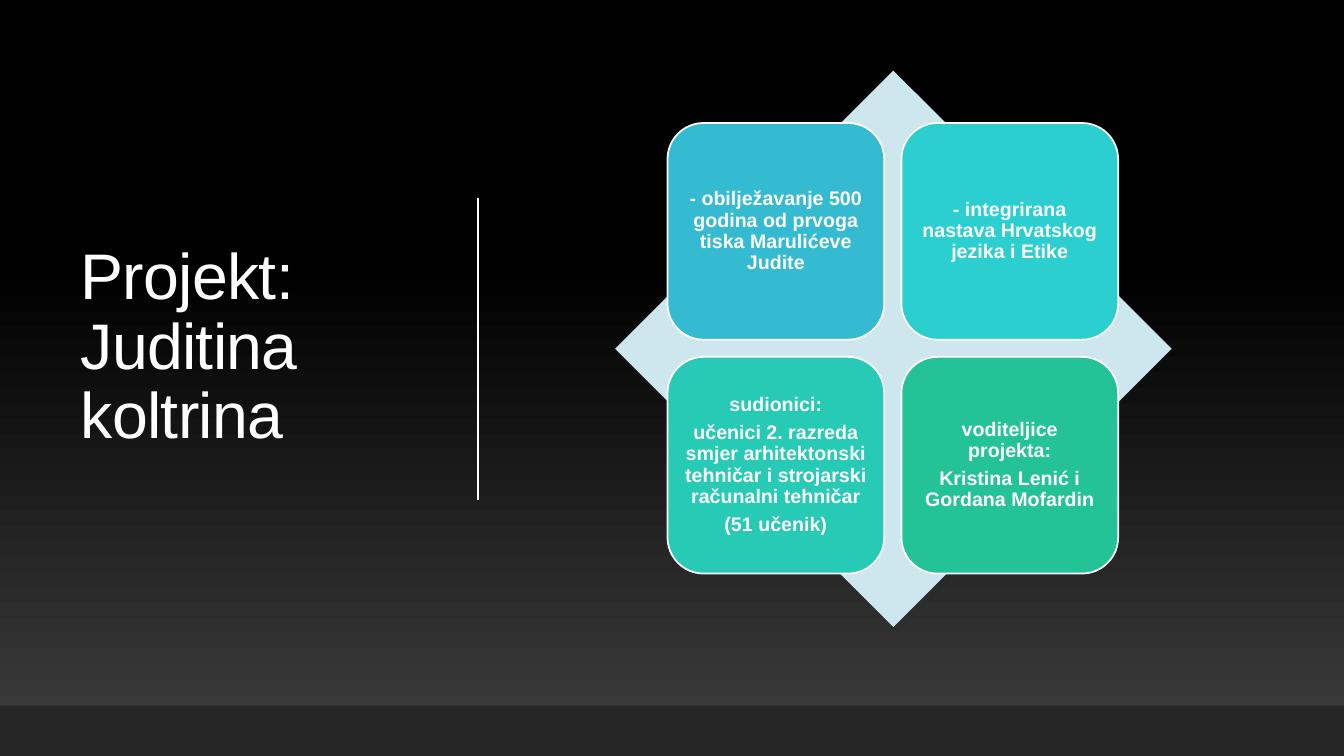
from pptx import Presentation
from pptx.dml.color import RGBColor
from pptx.enum.shapes import MSO_CONNECTOR, MSO_SHAPE
from pptx.enum.text import MSO_ANCHOR, MSO_AUTO_SIZE, PP_ALIGN
from pptx.oxml.ns import qn
from pptx.util import Inches, Pt

DIAMOND, ROUND, RECT = MSO_SHAPE.DIAMOND, MSO_SHAPE.ROUNDED_RECTANGLE, MSO_SHAPE.RECTANGLE
LEFT, CENTER = PP_ALIGN.LEFT, PP_ALIGN.CENTER
MIDDLE = MSO_ANCHOR.MIDDLE

WHITE = RGBColor(0xFF, 0xFF, 0xFF)
BLACK = RGBColor(0, 0, 0)
GREY = RGBColor(0x3F, 0x3F, 0x3F)
DARK = RGBColor(0x26, 0x26, 0x26)
PALE = RGBColor(0xCE, 0xE7, 0xEE)
FONT = "Arial"

TITLE = "Projekt: Juditina koltrina"
CARDS = [
    (RGBColor(0x34, 0xBB, 0xD2),
     ["- obilježavanje 500 godina od prvoga tiska Marulićeve Judite"]),
    (RGBColor(0x2B, 0xCF, 0xD0),
     ["- integrirana nastava Hrvatskog jezika i Etike"]),
    (RGBColor(0x27, 0xCA, 0xB4),
     ["sudionici:",
      "učenici 2. razreda smjer arhitektonski tehničar i strojarski računalni tehničar",
      "(51 učenik)"]),
    (RGBColor(0x23, 0xC3, 0x97),
     ["voditeljice projekta:", "Kristina Lenić i Gordana Mofardin"]),
]

WIDE, HIGH = 13.33, 7.5
CARD_X, CARD_Y, CARD, STEP = 6.62, 1.22, 2.15, 2.32


def add_block(slide, kind, box, color):
    block = slide.shapes.add_shape(kind, *map(Inches, box))
    block.shadow.inherit = False
    block.fill.solid()
    block.fill.fore_color.rgb = color
    block.line.fill.background()
    return block


def write(par, text, size, align, bold=False):
    par.alignment = align
    par.line_spacing = 0.9
    run = par.add_run()
    run.text = text
    run.font.name = FONT
    run.font.size = Pt(size)
    run.font.bold = bold
    run.font.color.rgb = WHITE
    return run


def add_card(slide, index, color, lines):
    row, col = divmod(index, 2)
    box = CARD_X + col * STEP, CARD_Y + row * STEP, CARD, CARD
    card = add_block(slide, ROUND, box, color)
    card.line.color.rgb = WHITE
    card.line.width = Pt(1.25)
    frame = card.text_frame
    frame.word_wrap = True
    frame.vertical_anchor = MIDDLE
    frame.margin_left = frame.margin_right = Inches(0.06)
    frame.margin_top = frame.margin_bottom = Inches(0.06)
    for i, line in enumerate(lines):
        par = frame.add_paragraph() if i else frame.paragraphs[0]
        par.space_after = Pt(5)
        write(par, line, 14, CENTER, True)


def add_title(slide):
    title = slide.shapes.title
    title.left, title.top = Inches(0.7), Inches(0.69)
    title.width, title.height = Inches(3.69), Inches(5.53)
    frame = title.text_frame
    frame.word_wrap = True
    frame.auto_size = MSO_AUTO_SIZE.NONE
    frame.vertical_anchor = MIDDLE
    run = write(frame.paragraphs[0], TITLE, 46, LEFT)
    run.font._element.set("spc", "-50")


def add_rule(slide):
    rule = slide.shapes.add_connector(
        MSO_CONNECTOR.STRAIGHT, *map(Inches, (4.74, 1.96, 4.74, 4.96)))
    rule.line.color.rgb = WHITE
    rule.line.width = Pt(1)
    props = rule._element.spPr
    props.append(props.makeelement(qn("a:effectLst"), {}))


def paint_back(slide):
    fill = slide.background.fill
    fill.gradient()
    fill.gradient_angle = 90
    for stop, color, place in zip(fill.gradient_stops, (GREY, BLACK), (0, 0.65)):
        stop.color.rgb = color
        stop.position = place


def main():
    deck = Presentation()
    deck.slide_width, deck.slide_height = Inches(WIDE), Inches(HIGH)
    slide = deck.slides.add_slide(deck.slide_layouts[5])
    paint_back(slide)
    add_title(slide)
    add_rule(slide)
    add_block(slide, RECT, (0, 7, WIDE, 0.5), DARK)
    add_block(slide, DIAMOND, (6.1, 0.7, 5.52, 5.52), PALE)
    for index, (color, lines) in enumerate(CARDS):
        add_card(slide, index, color, lines)
    deck.save("out.pptx")


if __name__ == "__main__":
    main()
